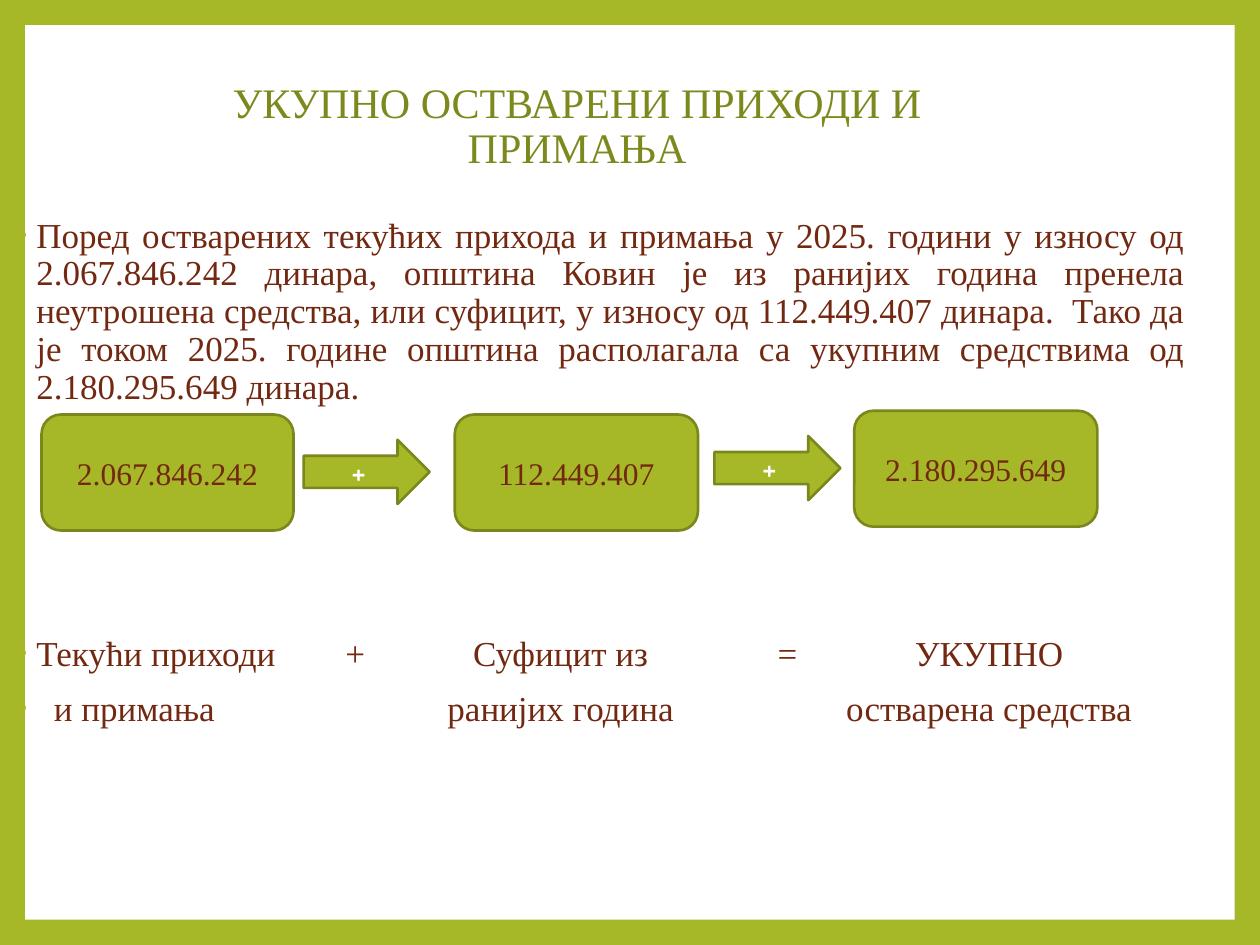
import lxml.etree
import pptx
import pptx.dml.color
import pptx.enum.shapes
import pptx.enum.text
import pptx.oxml.ns
import pptx.util

Inches = pptx.util.Inches
Pt = pptx.util.Pt
SHAPE = pptx.enum.shapes.MSO_SHAPE
ALIGN = pptx.enum.text.PP_ALIGN
ANCHOR = pptx.enum.text.MSO_ANCHOR
COLORS = {"green": "A6B727", "olive": "7B871D", "title": "7D891D",
          "text": "722811", "white": "FFFFFF"}
SERIF = "Times New Roman"


def rgb(name):
    """Return the named colour."""
    return pptx.dml.color.RGBColor.from_string(COLORS[name])


def style(p, size, color, align, font=SERIF):
    """Format a paragraph and its runs."""
    p.alignment = align
    for r in p.runs:
        r.font.size = Pt(size)
        r.font.name = font
        r.font.color.rgb = rgb(color)


def add_bullet(p, margin, hanging):
    """Give a paragraph a small green bullet with a hanging indent."""
    pPr = p._p.get_or_add_pPr()
    pPr.set("marL", str(Inches(margin)))
    pPr.set("indent", str(-Inches(hanging)))
    qn = pptx.oxml.ns.qn
    clr = lxml.etree.SubElement(pPr, qn("a:buClr"))
    lxml.etree.SubElement(clr, qn("a:srgbClr"), val=COLORS["green"])
    lxml.etree.SubElement(pPr, qn("a:buSzPct"), val="80000")
    lxml.etree.SubElement(pPr, qn("a:buFont"), typeface="Arial")
    lxml.etree.SubElement(pPr, qn("a:buChar"), char="•")


def add_text(s, x, y, w, h, lines, size, color, align, bullets=(), anchor=ANCHOR.TOP):
    """Add a text box with one paragraph per line."""
    tf = s.shapes.add_textbox(Inches(x), Inches(y), Inches(w), Inches(h)).text_frame
    tf.word_wrap = True
    tf.vertical_anchor = anchor
    tf.text = "\n".join(lines)
    for i, p in enumerate(tf.paragraphs):
        if bullets:
            add_bullet(p, *bullets[i])
        p.line_spacing = 0.9
        if i:
            p.space_before = Pt(10)
        style(p, size, color, align)


def add_block(s, kind, x, y, w, h, text, color, font):
    """Add a green outlined shape with centred text."""
    sp = s.shapes.add_shape(kind, Inches(x), Inches(y), Inches(w), Inches(h))
    sp.shadow.inherit = False
    sp.fill.solid()
    sp.fill.fore_color.rgb = rgb("green")
    sp.line.color.rgb = rgb("olive")
    sp.line.width = Pt(1.5)
    tf = sp.text_frame
    tf.word_wrap = True
    tf.vertical_anchor = ANCHOR.MIDDLE
    tf.text = text
    style(tf.paragraphs[0], 18, color, ALIGN.CENTER, font)


def add_frame(s):
    """Fill the slide with green and leave a white panel inside."""
    s.background.fill.solid()
    s.background.fill.fore_color.rgb = rgb("green")
    sp = s.shapes.add_shape(SHAPE.RECTANGLE, Inches(0.2), Inches(0.2),
                            Inches(9.6), Inches(7.1))
    sp.shadow.inherit = False
    sp.fill.solid()
    sp.fill.fore_color.rgb = rgb("white")
    sp.line.fill.background()


def add_flow(s, x, y):
    """Add the three amounts joined by arrows."""
    amounts = [(0, 0.03, 2, "2.067.846.242"), (3.28, 0.03, 1.93, "112.449.407"),
               (6.45, 0, 1.93, "2.180.295.649")]
    for dx, dy, w, text in amounts:
        add_block(s, SHAPE.ROUNDED_RECTANGLE, x + dx, y + dy, w, 0.92, text, "text", SERIF)
    for dx, dy in [(2.08, 0.23), (5.34, 0.2)]:
        add_block(s, SHAPE.RIGHT_ARROW, x + dx, y + dy, 1, 0.51, "+", "white", "Cabin")


def add_captions(s, x, y):
    """Add the caption under each amount and the signs between them."""
    add_text(s, x, y, 2.6, 0.8, ["Текући приходи", "и примања"], 20, "text",
             ALIGN.LEFT, [(0.19, 0.15), (0.33, 0.29)])
    columns = [(2.82, 0.5, ["+"]), (4.45, 2.4, ["Суфицит из", "ранијих година"]),
               (6.25, 0.5, ["="]), (7.85, 2.7, ["УКУПНО", "остварена средства"])]
    for center, w, lines in columns:
        add_text(s, x + center - w / 2, y, w, 0.8, lines, 20, "text", ALIGN.CENTER)


def main():
    """Build and save the slide."""
    prs = pptx.Presentation()
    prs.slide_width = Inches(10)
    prs.slide_height = Inches(7.5)
    s = prs.slides.add_slide(prs.slide_layouts[6])
    add_frame(s)
    add_text(s, 1.11, 0.29, 6.94, 1.44, ["УКУПНО ОСТВАРЕНИ ПРИХОДИ И ПРИМАЊА"],
             24, "title", ALIGN.CENTER, anchor=ANCHOR.MIDDLE)
    body = ("Поред остварених текућих прихода и примања у 2025. години у износу од "
            "2.067.846.242 динара, општина Ковин је из ранијих година пренела "
            "неутрошена средства, или суфицит, у износу од 112.449.407 динара.  "
            "Тако да је током 2025. године општина располагала са укупним "
            "средствима од 2.180.295.649 динара.")
    add_text(s, 0, 1.68, 9.5, 1.6, [body], 20, "text", ALIGN.JUSTIFY, [(0.19, 0.15)])
    add_flow(s, 0.33, 3.26)
    add_captions(s, 0, 5)
    prs.save("out.pptx")


if __name__ == "__main__":
    main()
